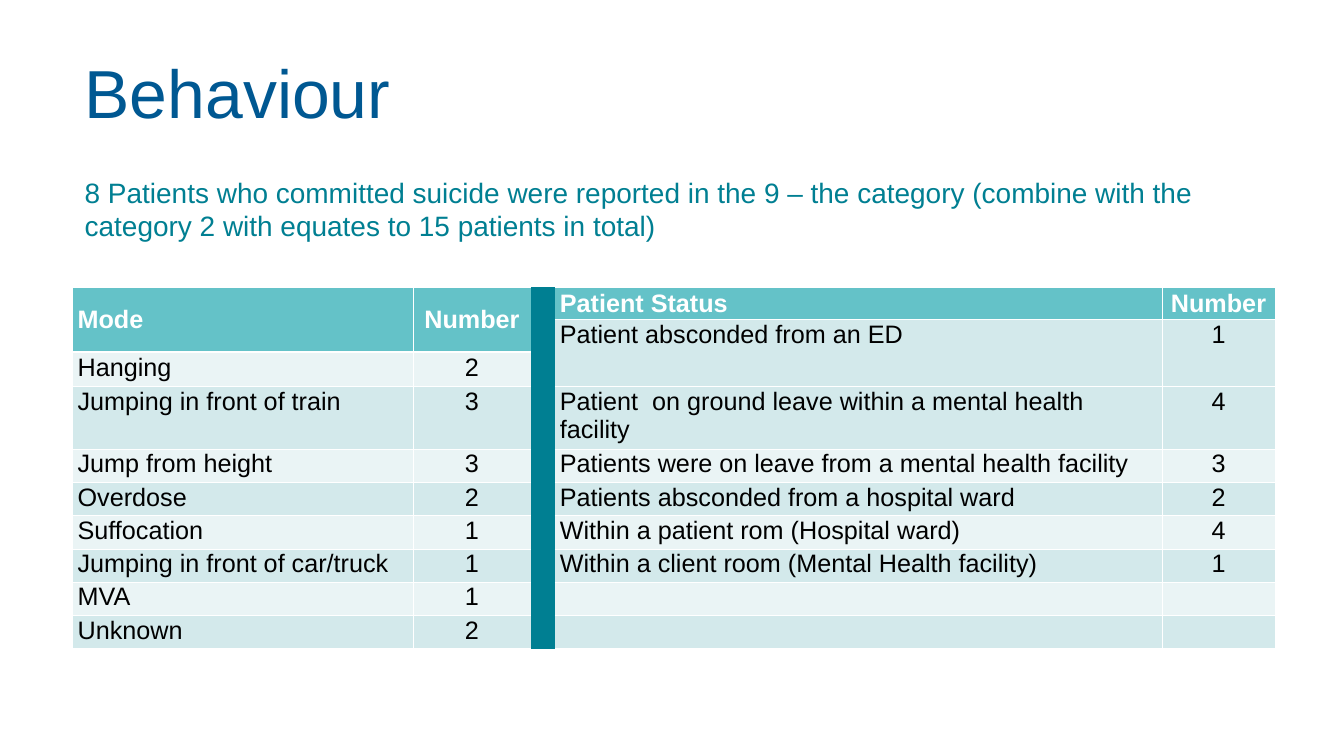
from lxml import etree
from pptx import Presentation
from pptx.dml.color import RGBColor
from pptx.enum import text
from pptx.oxml.ns import qn
from pptx.util import Inches, Pt

COLORS = {
    "title": "005892", "teal": "007F92", "header": "64C2C8",
    "band_dark": "D3E9EB", "band_light": "EAF4F5",
    "white": "FFFFFF", "black": "000000",
}
COLUMN_WIDTHS = [6.76, 2.33, 0.48, 12.05, 2.24]
ROW_HEIGHTS = [0.64, 0.65, 0.68, 1.2] + [0.66] * 6
DIVIDER = 2

# Each entry: first row, rows spanned, label, count
MODES = [
    (0, 2, "Mode", "Number"),
    (2, 1, "Hanging", "2"),
    (3, 1, "Jumping in front of train", "3"),
    (4, 1, "Jump from height", "3"),
    (5, 1, "Overdose", "2"),
    (6, 1, "Suffocation", "1"),
    (7, 1, "Jumping in front of car/truck", "1"),
    (8, 1, "MVA", "1"),
    (9, 1, "Unknown", "2"),
]
STATUSES = [
    (0, 1, "Patient Status", "Number"),
    (1, 2, "Patient absconded from an ED", "1"),
    (3, 1, "Patient  on ground leave within a mental health facility", "4"),
    (4, 1, "Patients were on leave from a mental health facility", "3"),
    (5, 1, "Patients absconded from a hospital ward", "2"),
    (6, 1, "Within a patient rom (Hospital ward)", "4"),
    (7, 1, "Within a client room (Mental Health facility)", "1"),
    (8, 1, "", ""),
    (9, 1, "", ""),
]


def rgb(name):
    return RGBColor.from_string(COLORS[name])


def style_font(paragraph, size, color, bold=False):
    font = paragraph.font
    font.name, font.size, font.bold = "Arial", Pt(size), bold
    font.color.rgb = rgb(color)


def add_text(slide, box, content, size, color, line_spacing, anchor):
    shape = slide.shapes.add_textbox(*map(Inches, box))
    frame = shape.text_frame
    frame.word_wrap = True
    frame.vertical_anchor = anchor
    frame.margin_left = frame.margin_right = 0
    frame.margin_top = frame.margin_bottom = 0
    paragraph = frame.paragraphs[0]
    paragraph.text = content
    paragraph.line_spacing = Pt(line_spacing)
    style_font(paragraph, size, color)


def set_borders(cell, widths):
    """Draw white borders; widths maps L, R, T, B to points, and 0 hides a side."""
    properties = cell._tc.get_or_add_tcPr()
    for side, width in widths.items():
        line = etree.SubElement(properties, qn(f"a:ln{side}"), w=str(Pt(width)))
        if width:
            fill = etree.SubElement(line, qn("a:solidFill"))
            etree.SubElement(fill, qn("a:srgbClr"), val=COLORS["white"])
        else:
            etree.SubElement(line, qn("a:noFill"))


def paint(cell, color):
    cell.fill.solid()
    cell.fill.fore_color.rgb = rgb(color)


def fill_columns(table, column, entries):
    """Fill a label column and the count column to its right."""
    for row, span, *contents in entries:
        is_header = row == 0
        band = "header" if is_header else "band_dark" if row % 2 else "band_light"
        for index, content in enumerate(contents, column):
            cell = table.cell(row, index)
            widths = {
                "L": 0 if index == DIVIDER + 1 else 1,
                "R": 0 if index == DIVIDER - 1 else 1,
                "T": 3 if row == entries[1][0] else 1,
                "B": 3 if is_header else 1,
            }
            for part in range(row, row + span):
                set_borders(table.cell(part, index), widths)
                paint(table.cell(part, index), band)
            if span > 1:
                cell.merge(table.cell(row + span - 1, index))
            cell.margin_left = cell.margin_right = Inches(0.1)
            cell.margin_top = cell.margin_bottom = Inches(0.02)
            if is_header:
                cell.vertical_anchor = text.MSO_ANCHOR.MIDDLE
            paragraph = cell.text_frame.paragraphs[0]
            paragraph.text = content
            if index > column:
                paragraph.alignment = text.PP_ALIGN.CENTER
            style_font(paragraph, 36, "white" if is_header else "black", is_header)


def add_behaviour_table(slide, left, top):
    frame = slide.shapes.add_table(
        len(ROW_HEIGHTS), len(COLUMN_WIDTHS), Inches(left), Inches(top),
        Inches(sum(COLUMN_WIDTHS)), Inches(sum(ROW_HEIGHTS)))
    table = frame.table
    table.first_row = table.horz_banding = False
    for column, width in zip(table.columns, COLUMN_WIDTHS):
        column.width = Inches(width)
    for row, height in zip(table.rows, ROW_HEIGHTS):
        row.height = Inches(height)
    last_row = len(ROW_HEIGHTS) - 1
    for row in range(last_row + 1):
        set_borders(table.cell(row, DIVIDER), dict.fromkeys("LRTB", 0))
        paint(table.cell(row, DIVIDER), "teal")
    table.cell(0, DIVIDER).merge(table.cell(last_row, DIVIDER))
    fill_columns(table, 0, MODES)
    fill_columns(table, DIVIDER + 1, STATUSES)


def main():
    presentation = Presentation()
    presentation.slide_width = Inches(26.67)
    presentation.slide_height = Inches(15)
    slide = presentation.slides.add_slide(presentation.slide_layouts[6])
    add_text(slide, (1.68, 1.23, 23.15, 1.27), "Behaviour", 97, "title", 108,
             text.MSO_ANCHOR.MIDDLE)
    add_text(slide, (1.68, 3.48, 23.62, 7.95),
             "8 Patients who committed suicide were reported in the 9 – the category "
             "(combine with the category 2 with equates to 15 patients in total)",
             40, "teal", 48, text.MSO_ANCHOR.TOP)
    add_behaviour_table(slide, 1.44, 5.7)
    presentation.save("out.pptx")


if __name__ == "__main__":
    main()
